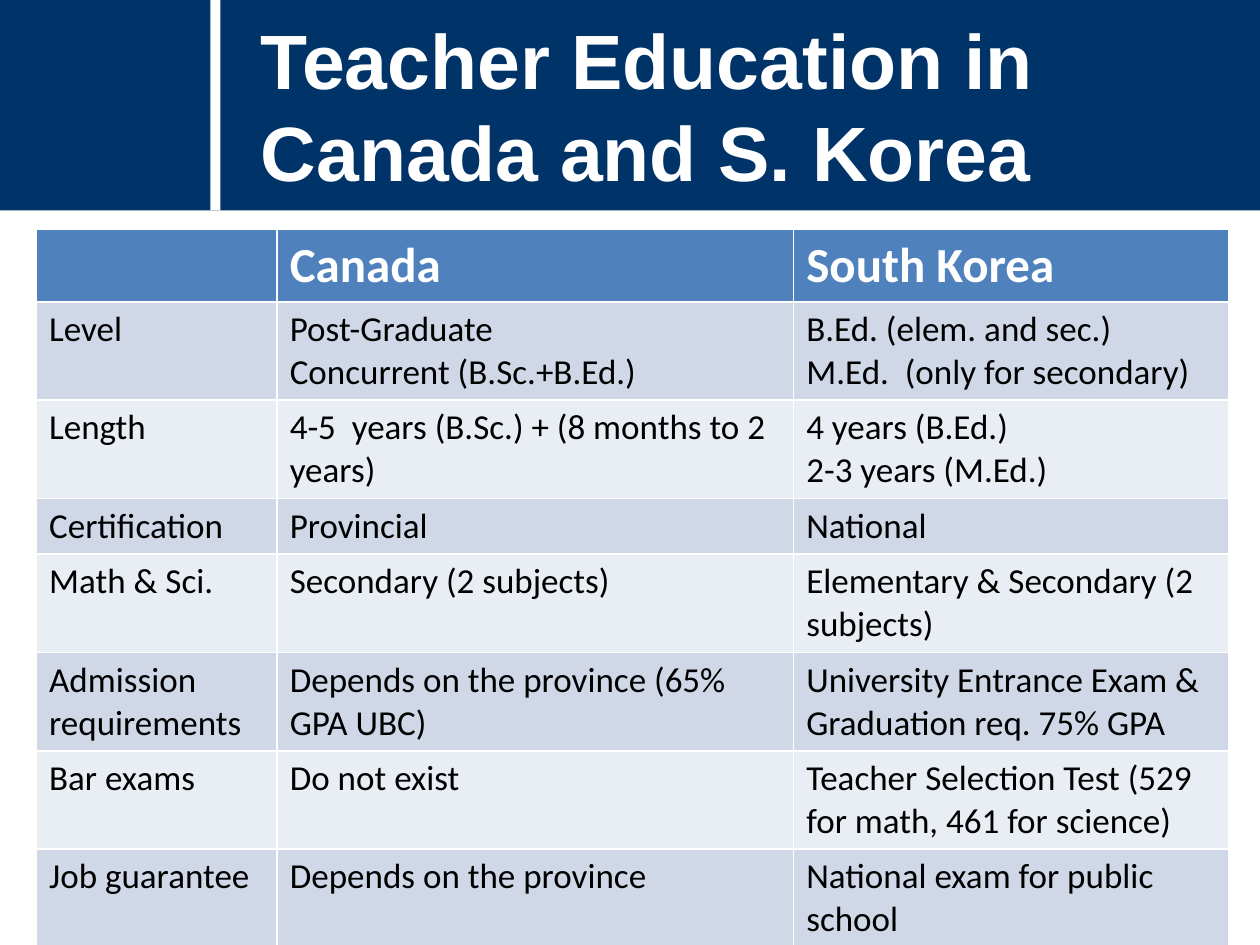
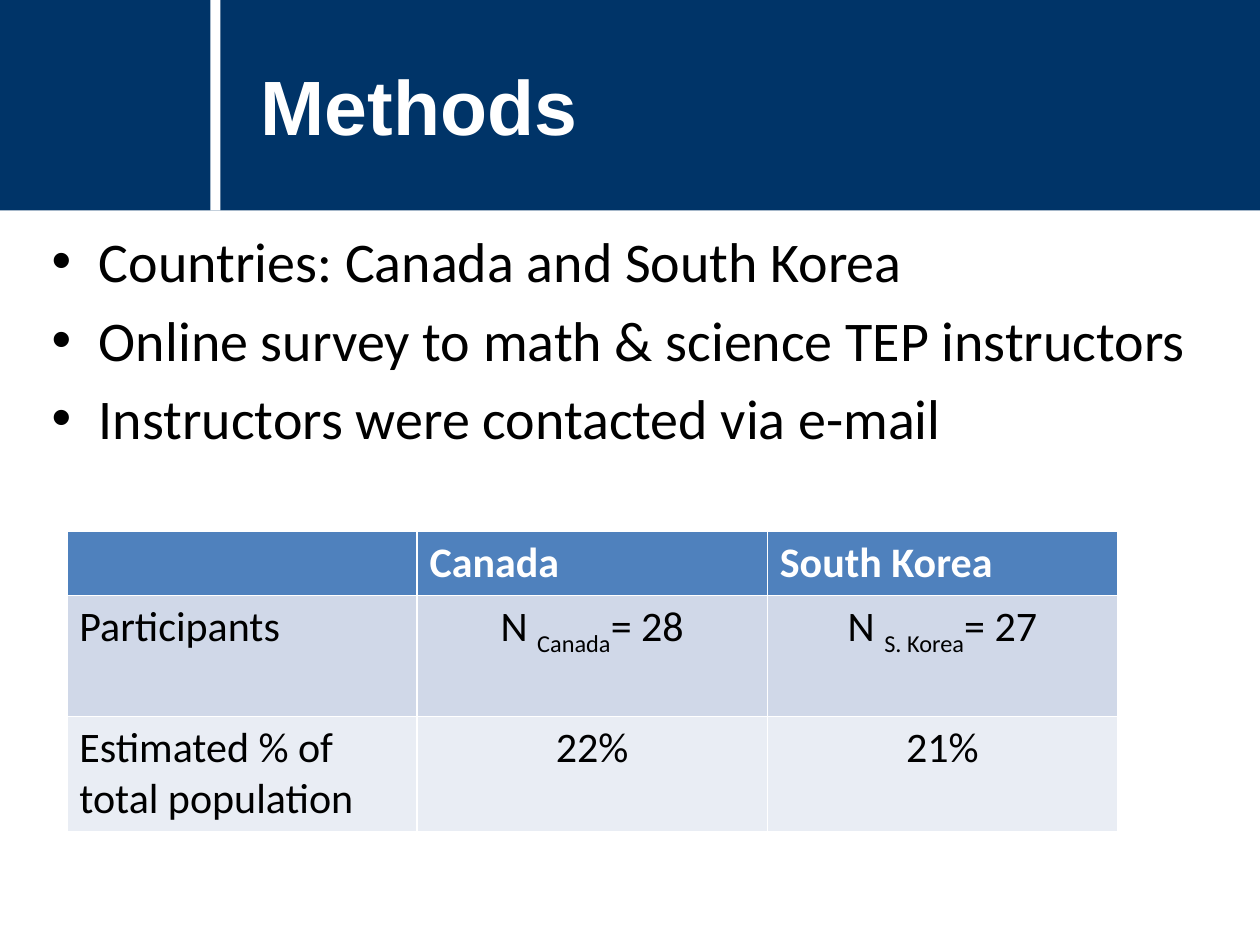
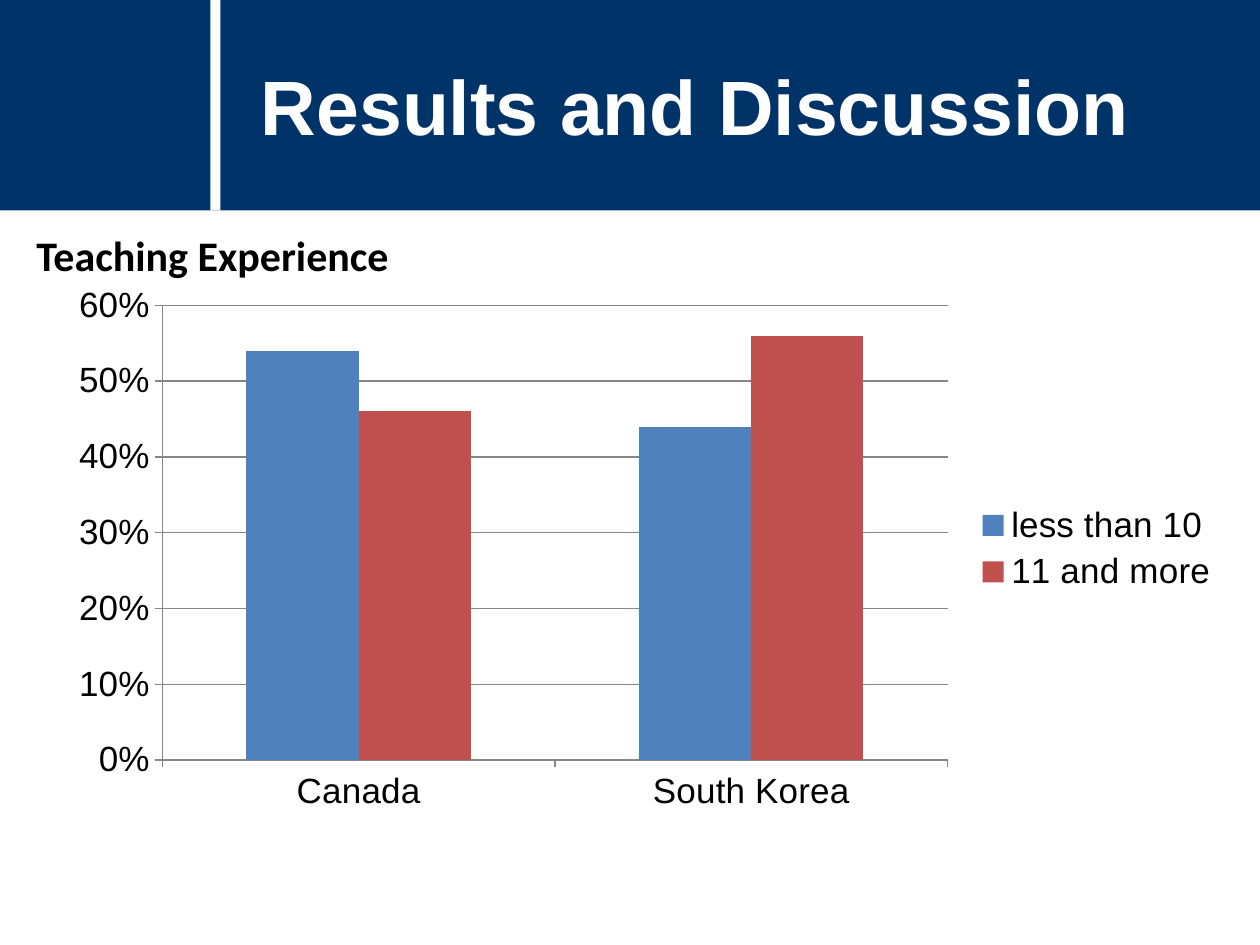
import pptx
import pptx.util
import pptx.chart.data
import pptx.dml.color
import pptx.enum.chart
import pptx.enum.shapes
import pptx.enum.text

Inches = pptx.util.Inches
Pt = pptx.util.Pt
RGBColor = pptx.dml.color.RGBColor
ALIGN = pptx.enum.text.PP_ALIGN

# Content; text between underscores in a cell is subscript
EDUCATION_TITLE = "Teacher Education in Canada and S. Korea"
EDUCATION_ROWS = [
    ("", "Canada", "South Korea"),
    ("Level", "Post-Graduate\nConcurrent (B.Sc.+B.Ed.)",
     "B.Ed. (elem. and sec.)\nM.Ed.  (only for secondary)"),
    ("Length", "4-5  years (B.Sc.) + (8 months to 2 years)",
     "4 years (B.Ed.)\n2-3 years (M.Ed.)"),
    ("Certification", "Provincial", "National"),
    ("Math & Sci.", "Secondary (2 subjects)", "Elementary & Secondary (2 subjects)"),
    ("Admission requirements", "Depends on the province (65% GPA UBC)",
     "University Entrance Exam &\nGraduation req. 75% GPA"),
    ("Bar exams", "Do not exist",
     "Teacher Selection Test (529 for math, 461 for science)"),
    ("Job guarantee", "Depends on the province", "National exam for public school"),
]
METHODS_TITLE = "Methods"
METHODS = [
    "Countries: Canada and South Korea",
    "Online survey to math & science TEP instructors",
    "Instructors were contacted via e-mail",
]
PARTICIPANT_ROWS = [
    ("", "Canada", "South Korea"),
    ("Participants", "N _Canada_= 28", "N _S. Korea_= 27"),
    ("Estimated % of total population", "22%", "21%"),
]
RESULTS_TITLE = "Results and Discussion"
EXPERIENCE_HEADING = "Teaching Experience"
COUNTRIES = ["Canada", "South Korea"]

# Shared look
NAVY = RGBColor(0x00, 0x34, 0x68)
WHITE = RGBColor(0xFF, 0xFF, 0xFF)
BLACK = RGBColor(0x00, 0x00, 0x00)
BLUE = RGBColor(0x4F, 0x81, 0xBD)
RED = RGBColor(0xC0, 0x50, 0x4D)
STRIPES = [RGBColor(0xE9, 0xED, 0xF4), RGBColor(0xD0, 0xD8, 0xE8)]
GREY = RGBColor(0x86, 0x86, 0x86)
EXPERIENCE = [("less than 10", (0.54, 0.44), BLUE), ("11 and more", (0.46, 0.56), RED)]

WIDTH, HEIGHT = 10, 7.5
BAND_HEIGHT = 1.67
DIVIDER_LEFT, DIVIDER_WIDTH = 1.67, 0.08
TITLE_BOX = (1.97, 0.24, 7.81, 1.18)
TITLE_AND_CONTENT, TITLE_ONLY = 1, 5


def inches(*lengths):
    return [Inches(length) for length in lengths]


def style(font, size, color, bold=False, name="Calibri"):
    font.name, font.size, font.bold = name, Pt(size), bold
    font.color.rgb = color


def place(shape, box):
    shape.left, shape.top, shape.width, shape.height = inches(*box)


def add_slide(deck, layout, title_text):
    """Add a slide with the navy band, its white divider and the title."""
    slide = deck.slides.add_slide(deck.slide_layouts[layout])
    bars = [(0, WIDTH, NAVY), (DIVIDER_LEFT, DIVIDER_WIDTH, WHITE)]
    for depth, (left, width, color) in enumerate(bars):
        bar = slide.shapes.add_shape(pptx.enum.shapes.MSO_SHAPE.RECTANGLE,
                                     *inches(left, 0, width, BAND_HEIGHT))
        bar.shadow.inherit = False
        bar.fill.solid()
        bar.fill.fore_color.rgb = color
        bar.line.fill.background()
        # Bars lie behind the placeholders
        slide.shapes._spTree.insert(2 + depth, bar._element)
    title = slide.shapes.title
    place(title, TITLE_BOX)
    frame = title.text_frame
    frame.text = title_text
    frame.auto_size = pptx.enum.text.MSO_AUTO_SIZE.NONE
    frame.vertical_anchor = pptx.enum.text.MSO_ANCHOR.MIDDLE
    frame.paragraphs[0].alignment = ALIGN.LEFT
    style(frame.paragraphs[0].runs[0].font, 44, WHITE, True, "Arial")
    return slide


def fill_paragraph(paragraph, text, size, color, bold):
    for part, words in enumerate(text.split("_")):
        run = paragraph.add_run()
        run.text = words
        style(run.font, size, color, bold)
        if part % 2:
            run._r.get_or_add_rPr().set("baseline", "-25000")


def add_comparison(slide, rows, left, top, columns, heights, sizes, value_align):
    """Add a table with a blue header row and striped body rows."""
    header_size, body_size = sizes
    table = slide.shapes.add_table(
        len(rows), len(columns),
        *inches(left, top, sum(columns), sum(heights))).table
    for column, width in zip(table.columns, columns):
        column.width = Inches(width)
    for r, (texts, height) in enumerate(zip(rows, heights)):
        table.rows[r].height = Inches(height)
        header = r == 0
        for c, text in enumerate(texts):
            cell = table.cell(r, c)
            cell.fill.solid()
            cell.fill.fore_color.rgb = BLUE if header else STRIPES[r % 2]
            if not text:
                continue
            cell.text = "\n" * text.count("\n")
            for paragraph, line in zip(cell.text_frame.paragraphs, text.split("\n")):
                paragraph.alignment = ALIGN.LEFT if header or c == 0 else value_align
                fill_paragraph(paragraph, line, header_size if header else body_size,
                               WHITE if header else BLACK, header)


def add_experience_chart(slide, box):
    data = pptx.chart.data.CategoryChartData(number_format="0%")
    data.categories = COUNTRIES
    for name, shares, _ in EXPERIENCE:
        data.add_series(name, shares)
    chart = slide.shapes.add_chart(
        pptx.enum.chart.XL_CHART_TYPE.COLUMN_CLUSTERED, *inches(*box), data).chart
    style(chart.font, 20, BLACK, name="Arial")
    chart.has_title = False
    chart.has_legend = True
    chart.legend.position = pptx.enum.chart.XL_LEGEND_POSITION.RIGHT
    chart.legend.include_in_layout = False
    columns = chart.plots[0]
    columns.gap_width = 150
    columns.vary_by_categories = False
    for series, (_, _, color) in zip(columns.series, EXPERIENCE):
        series.format.fill.solid()
        series.format.fill.fore_color.rgb = color
    shares_axis = chart.value_axis
    shares_axis.minimum_scale, shares_axis.maximum_scale = 0, 0.6
    shares_axis.major_unit = 0.1
    shares_axis.has_major_gridlines = True
    shares_axis.tick_labels.number_format = "0%"
    shares_axis.tick_labels.number_format_is_linked = False
    for axis in (shares_axis, chart.category_axis):
        axis.major_tick_mark = pptx.enum.chart.XL_TICK_MARK.OUTSIDE
        axis.format.line.color.rgb = GREY
    shares_axis.major_gridlines.format.line.color.rgb = GREY


def main():
    deck = pptx.Presentation()
    deck.slide_width, deck.slide_height = inches(WIDTH, HEIGHT)

    # Teacher education
    education = add_slide(deck, TITLE_ONLY, EDUCATION_TITLE)
    one_line, two_lines = 0.44, 0.78
    heights = [0.56] + [two_lines] * 2 + [one_line] + [two_lines] * 4
    add_comparison(education, EDUCATION_ROWS, 0.29, 1.82, [1.91, 4.1, 3.45],
                   heights, (28, 20), ALIGN.LEFT)

    # Methods
    methods = add_slide(deck, TITLE_AND_CONTENT, METHODS_TITLE)
    body = methods.placeholders[1]
    place(body, (0.31, 1.75, 9.47, 4.95))
    body.text_frame.text = "\n".join(METHODS)
    for paragraph in body.text_frame.paragraphs:
        style(paragraph.runs[0].font, 32, BLACK)
    add_comparison(methods, PARTICIPANT_ROWS, 0.53, 4.22, [2.78] * 3,
                   [0.5, 0.96, 0.9], (24, 24), ALIGN.CENTER)

    # Results
    results = add_slide(deck, TITLE_ONLY, RESULTS_TITLE)
    heading = results.shapes.add_textbox(*inches(0.19, 1.77, 3.03, 0.5)).text_frame
    heading.text = EXPERIENCE_HEADING
    heading.word_wrap = False
    heading.auto_size = pptx.enum.text.MSO_AUTO_SIZE.SHAPE_TO_FIT_TEXT
    style(heading.paragraphs[0].runs[0].font, 24, BLACK, True)
    add_experience_chart(results, (0.44, 2.18, 9.34, 4.35))

    deck.save("out.pptx")


if __name__ == "__main__":
    main()
